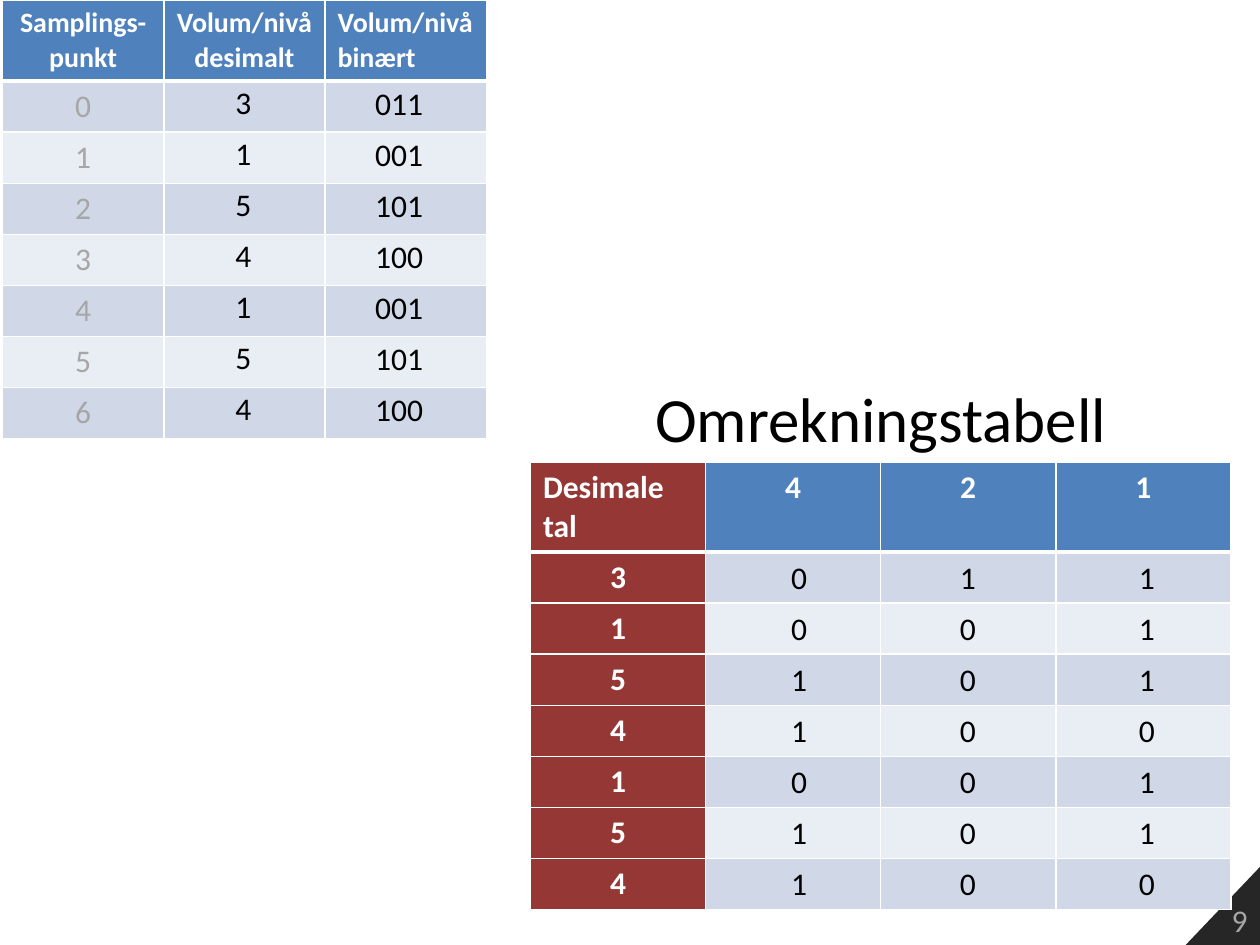
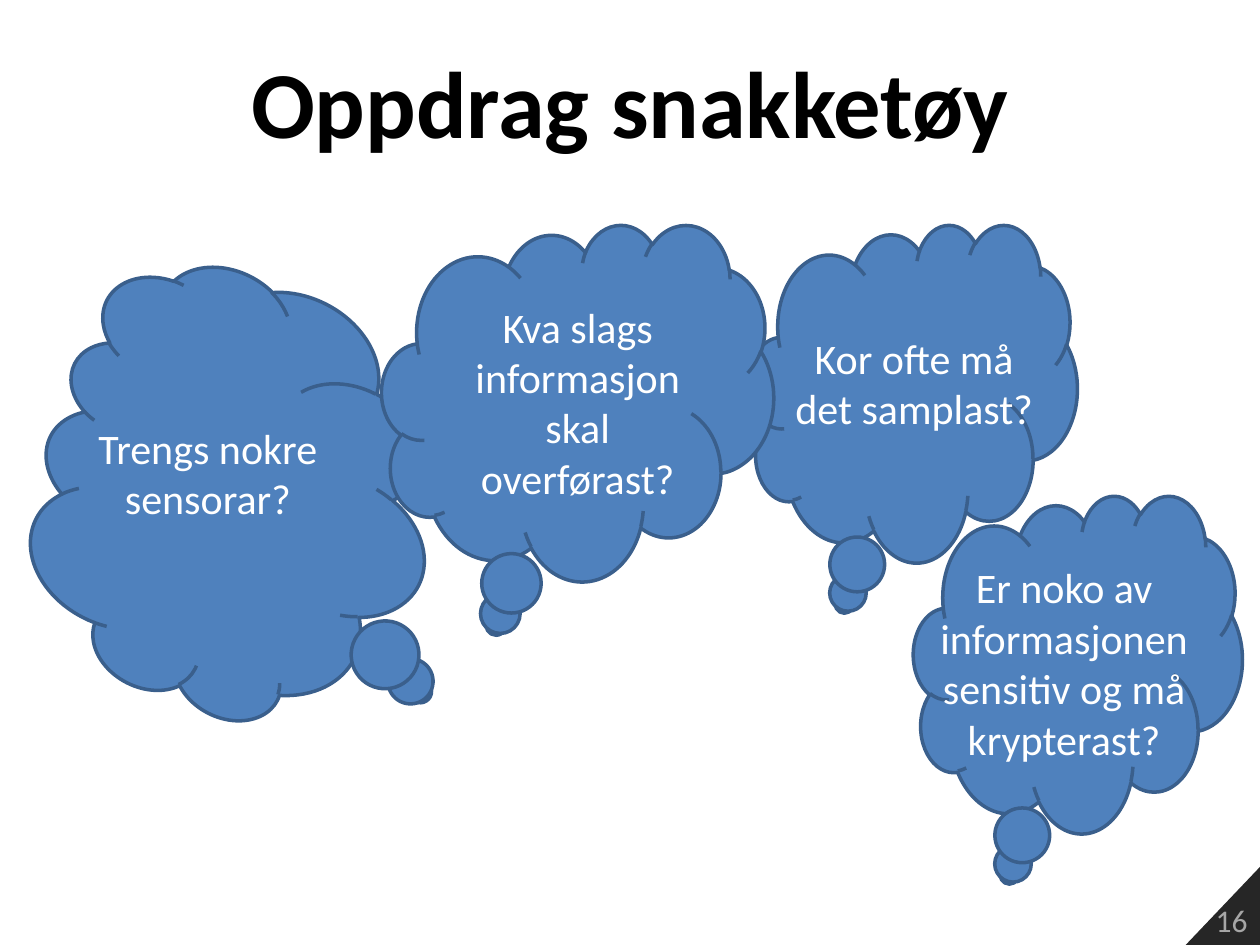
from dataclasses import dataclass

from lxml import etree
from pptx import Presentation
from pptx.dml.color import RGBColor
from pptx.enum.shapes import MSO_SHAPE
from pptx.enum.text import MSO_ANCHOR, MSO_AUTO_SIZE, PP_ALIGN
from pptx.oxml.ns import qn
from pptx.slide import Slide
from pptx.table import _Cell
from pptx.text.text import TextFrame
from pptx.util import Inches, Pt

CLOUD = MSO_SHAPE.CLOUD_CALLOUT
LEFT, MID, RIGHT = PP_ALIGN.LEFT, PP_ALIGN.CENTER, PP_ALIGN.RIGHT
TOP, BOTTOM = MSO_ANCHOR.TOP, MSO_ANCHOR.BOTTOM
NO_FIT = MSO_AUTO_SIZE.NONE

FONT = "Calibri"
BLACK = RGBColor(0x00, 0x00, 0x00)
WHITE = RGBColor(0xFF, 0xFF, 0xFF)
GREY = RGBColor(0xA6, 0xA6, 0xA6)
DARK = RGBColor(0x26, 0x26, 0x26)
BLUE = RGBColor(0x4F, 0x81, 0xBD)
EDGE = RGBColor(0x3A, 0x5F, 0x8C)
RED = RGBColor(0x95, 0x37, 0x35)
BANDS = (RGBColor(0xD0, 0xD8, 0xE8), RGBColor(0xE9, 0xED, 0xF4))

ROW = Inches(0.405)  # height of a body row
LEVELS = (3, 1, 5, 4, 1, 5, 4)
BITS = [f"{level:03b}" for level in LEVELS]


@dataclass
class Box:
    left: float
    top: float
    width: float
    height: float

    def emu(self) -> tuple:
        return tuple(Inches(v) for v in
                     (self.left, self.top, self.width, self.height))


@dataclass
class Style:
    size: float = 18
    color: RGBColor = BLACK
    bold: bool = False
    align: PP_ALIGN = LEFT


@dataclass
class Grid:
    left: float
    top: float
    width: float        # of one column
    head: float         # height of the header row
    heads: list
    firsts: list        # texts of the first column
    style: Style        # header style
    first: Style        # first column style
    aligns: list        # header alignments
    red: bool = False   # first column filled red


@dataclass
class Answer:
    left: float
    top: float
    width: float
    texts: list


@dataclass
class Thought:
    text: str
    cloud: Box
    label: Box
    turn: float = 0


def write(frame: TextFrame, text: str, style: Style,
          anchor: MSO_ANCHOR = TOP) -> None:
    frame.text = text
    frame.word_wrap = True
    frame.auto_size = NO_FIT
    frame.vertical_anchor = anchor
    dress(frame, style)


def dress(frame: TextFrame, style: Style) -> None:
    for para in frame.paragraphs:
        para.alignment = style.align
        for run in para.runs:
            font = run.font
            font.name, font.size = FONT, Pt(style.size)
            font.bold, font.color.rgb = style.bold, style.color


def add_page(deck: Presentation, number: int, title: str, box: Box,
             style: Style) -> Slide:
    """Add a slide with its title and numbered corner."""
    page = deck.slides.add_slide(deck.slide_layouts[5])
    head = page.shapes.title
    head.left, head.top, head.width, head.height = box.emu()
    write(head.text_frame, title, style)

    pen = page.shapes.build_freeform(Inches(9.41), Inches(7.5))
    pen.add_line_segments([(Inches(10), Inches(6.88)),
                           (Inches(10), Inches(7.5))])
    corner = pen.convert_to_shape()
    corner.shadow.inherit = False
    corner.fill.solid()
    corner.fill.fore_color.rgb = DARK
    corner.line.fill.background()
    write(corner.text_frame, str(number), Style(18, GREY, align=RIGHT), BOTTOM)
    return page


def add_label(page: Slide, box: Box, text: str, style: Style) -> None:
    write(page.shapes.add_textbox(*box.emu()).text_frame, text, style)


def paint(cell: _Cell, fill: RGBColor, under: float, over: float) -> None:
    """Give a cell white borders and a plain fill."""
    props = cell._tc.get_or_add_tcPr()
    for side, width in (("L", 1), ("R", 1), ("T", over), ("B", under)):
        line = etree.SubElement(props, qn(f"a:ln{side}"), w=str(Pt(width)))
        solid = etree.SubElement(line, qn("a:solidFill"))
        etree.SubElement(solid, qn("a:srgbClr"), val=str(WHITE))
    cell.fill.solid()
    cell.fill.fore_color.rgb = fill


def add_grid(page: Slide, grid: Grid) -> None:
    rows, cols = len(grid.firsts) + 1, len(grid.heads)
    table = page.shapes.add_table(
        rows, cols, Inches(grid.left), Inches(grid.top),
        Inches(grid.width * cols), Inches(grid.head) + ROW * (rows - 1)).table
    for col in table.columns:
        col.width = Inches(grid.width)
    for r, row in enumerate(table.rows):
        row.height = ROW if r else Inches(grid.head)
        for c, cell in enumerate(row.cells):
            fill = BANDS[(r - 1) % 2] if r else BLUE
            if grid.red and c == 0:
                fill = RED
            paint(cell, fill, 1 if r else 3, 3 if r == 1 else 1)
            if r == 0:
                cell.text_frame.text = grid.heads[c]
                dress(cell.text_frame, grid.style)
                for para in cell.text_frame.paragraphs:
                    para.alignment = grid.aligns[c]
            elif c == 0:
                cell.text_frame.text = str(grid.firsts[r - 1])
                dress(cell.text_frame, grid.first)


def add_answer(page: Slide, answer: Answer) -> None:
    """Lay one column of answers over the table rows."""
    for i, text in enumerate(answer.texts):
        top = answer.top + i * ROW.inches
        add_label(page, Box(answer.left, top, answer.width, 0.4),
                  str(text), Style())


def add_thought(page: Slide, thought: Thought) -> None:
    cloud = page.shapes.add_shape(CLOUD, *thought.cloud.emu())
    cloud.rotation = thought.turn
    cloud.shadow.inherit = False
    cloud.fill.solid()
    cloud.fill.fore_color.rgb = BLUE
    cloud.line.color.rgb = EDGE
    cloud.line.width = Pt(2)
    add_label(page, thought.label, thought.text, Style(24, WHITE, align=MID))


# Content of the conversion slide
GRIDS = [
    Grid(0.02, 0, 1.28, 0.64,
         ["Samplings-punkt", "Volum/nivå\ndesimalt", "Volum/nivå\nbinært"],
         list(range(7)), Style(16, WHITE, True), Style(18, GREY, align=MID),
         [MID, MID, LEFT]),
    Grid(4.21, 3.67, 1.39, 0.7, ["Desimale\ntal", "4", "2", "1"],
         list(LEVELS), Style(18, WHITE, True), Style(18, WHITE, True, MID),
         [LEFT, MID, MID, MID], red=True),
]
ANSWERS = [Answer(1.77, 0.61, 0.39, list(LEVELS)),
           Answer(2.88, 0.62, 0.63, BITS)]
ANSWERS += [Answer(left, 4.38, 0.39, [bits[i] for bits in BITS])
            for i, left in enumerate((6.18, 7.52, 8.94))]

# Content of the mission slide, from back to front
THOUGHTS = [
    Thought("Kor ofte må det samplast?", Box(5.94, 1.78, 2.61, 2.68),
            Box(6.15, 2.59, 2.21, 0.91)),
    Thought("Trengs nokre sensorar?", Box(0.16, 2.33, 3.39, 3.23),
            Box(0.67, 3.3, 1.96, 0.91), 296.9),
    Thought("Kva slags informasjon skal overførast?",
            Box(3.03, 1.78, 3.11, 2.83), Box(3.48, 2.34, 2.21, 1.31)),
    Thought("Er noko av informasjonen sensitiv og må krypterast?",
            Box(7.25, 3.93, 2.61, 2.68), Box(7.34, 4.41, 2.21, 1.72)),
]


def main() -> None:
    deck = Presentation()
    deck.slide_width, deck.slide_height = Inches(10), Inches(7.5)

    page = add_page(deck, 9, "Omrekningstabell", Box(2.49, 2.96, 9, 0.94),
                    Style(36, align=MID))
    for grid in GRIDS:
        add_grid(page, grid)
    for answer in ANSWERS:
        add_answer(page, answer)

    page = add_page(deck, 16, "Oppdrag snakketøy", Box(0.5, 0.3, 9, 1.25),
                    Style(54, bold=True, align=MID))
    for thought in THOUGHTS:
        add_thought(page, thought)

    deck.save("out.pptx")


if __name__ == "__main__":
    main()
